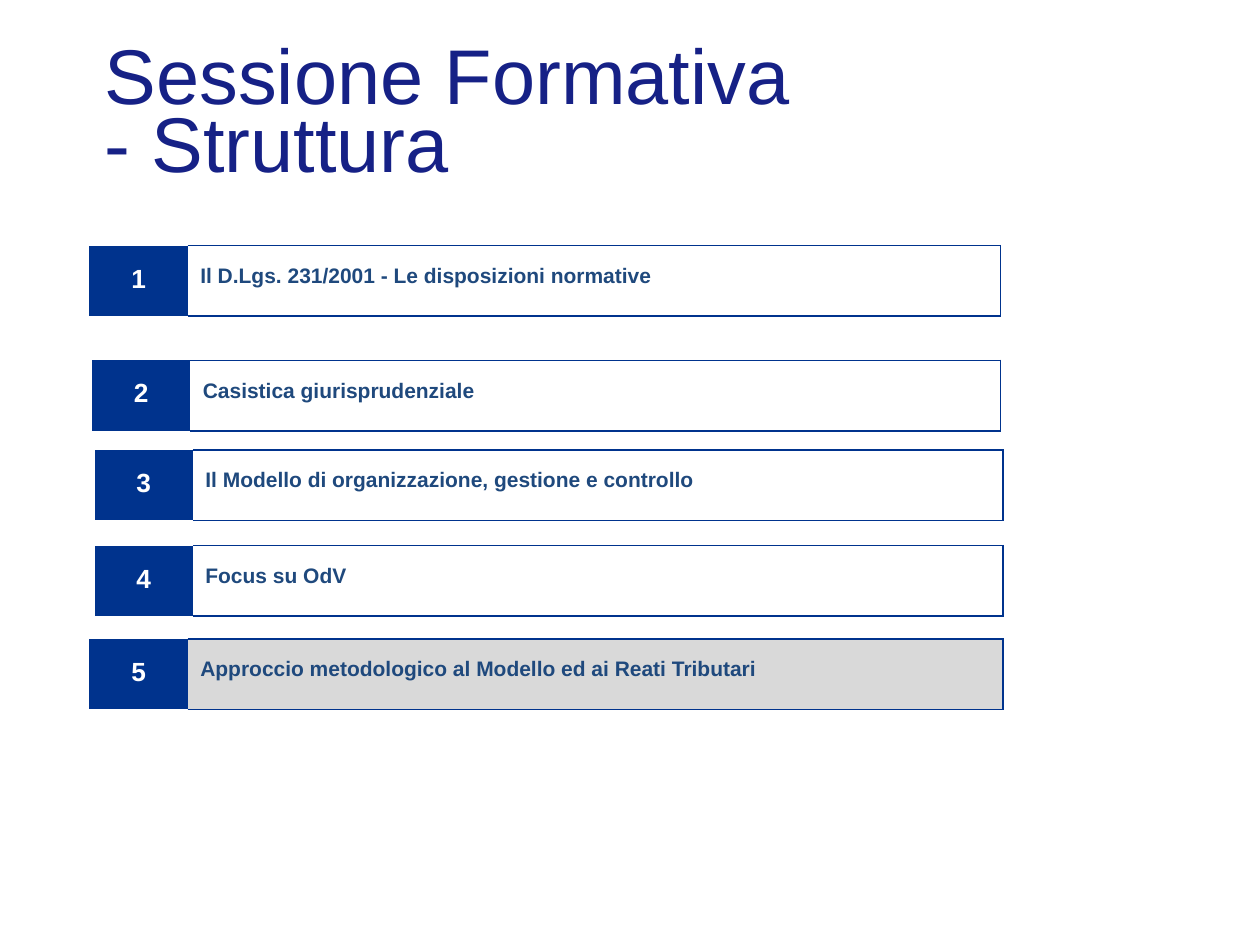
from dataclasses import dataclass

from lxml import etree
from pptx import Presentation
from pptx.dml.color import RGBColor
from pptx.enum import text
from pptx.oxml import ns
from pptx.util import Inches, Pt


@dataclass(frozen=True)
class Theme:
    font: str = "Arial"
    title: str = "162186"
    blue: str = "00338D"
    label: str = "1F497D"
    white: str = "FFFFFF"
    highlight: str = "D9D9D9"
    title_size: float = 44.3
    number_size: float = 15
    label_size: float = 12


@dataclass(frozen=True)
class Section:
    label: str
    left: float
    top: float
    label_width: float = 6.43
    fill: str | None = None


THEME = Theme()
NUMBER_WIDTH = 0.78
ROW_HEIGHT = 0.56
NO_STYLE_NO_GRID = "{2D5ABB26-0587-4C30-8999-92F81FD0307C}"

SECTIONS = [
    Section("Il D.Lgs. 231/2001 - Le disposizioni normative", 0.71, 1.95, 6.45),
    Section("Casistica giurisprudenziale", 0.73, 2.86),
    Section("Il Modello di organizzazione, gestione e controllo", 0.75, 3.57),
    Section("Focus su OdV", 0.75, 4.33),
    Section("Approccio metodologico al Modello ed ai Reati Tributari",
            0.71, 5.07, 6.47, THEME.highlight),
]


def style_font(p, size: float, color: str, bold: bool = False) -> None:
    p.font.name = THEME.font
    p.font.size = Pt(size)
    p.font.bold = bold
    p.font.color.rgb = RGBColor.from_string(color)


def fill_cell(cell, content: str, size: float, color: str,
              fill: str | None, indent: float = 0) -> None:
    cell.margin_left = Inches(indent)
    cell.margin_right = cell.margin_bottom = 0
    cell.margin_top = Inches(0.15)
    if fill:
        cell.fill.solid()
        cell.fill.fore_color.rgb = RGBColor.from_string(fill)
    else:
        cell.fill.background()
    p = cell.text_frame.paragraphs[0]
    p.text = content
    style_font(p, size, color, bold=True)


def add_borders(cell, sides: str) -> None:
    """Draw 1 pt borders; sides are given in schema order (L, R, T, B)."""
    props = cell._tc.get_or_add_tcPr()
    for i, side in enumerate(sides):
        ln = etree.Element(ns.qn(f"a:ln{side}"), w=str(Pt(1)))
        solid = etree.SubElement(ln, ns.qn("a:solidFill"))
        etree.SubElement(solid, ns.qn("a:srgbClr"), val=THEME.blue)
        props.insert(i, ln)


def add_title(slide, content: str) -> None:
    sp = slide.shapes.add_textbox(Inches(0.83), Inches(0.4), Inches(5.59), Inches(0.6))
    tf = sp.text_frame
    tf.word_wrap = True
    tf.vertical_anchor = text.MSO_ANCHOR.TOP
    tf.margin_left = tf.margin_top = tf.margin_right = tf.margin_bottom = 0
    p = tf.paragraphs[0]
    p.text = content
    p.line_spacing = 0.73
    style_font(p, THEME.title_size, THEME.title)


def add_section(slide, number: int, section: Section) -> None:
    table = slide.shapes.add_table(
        1, 2, Inches(section.left), Inches(section.top),
        Inches(NUMBER_WIDTH + section.label_width), Inches(ROW_HEIGHT)).table
    table.first_row = table.horz_banding = False
    table._tbl.tblPr.find(ns.qn("a:tableStyleId")).text = NO_STYLE_NO_GRID
    table.columns[0].width = Inches(NUMBER_WIDTH)
    table.columns[1].width = Inches(section.label_width)

    number_cell, label_cell = table.cell(0, 0), table.cell(0, 1)
    fill_cell(number_cell, str(number), THEME.number_size, THEME.white, THEME.blue)
    number_cell.text_frame.paragraphs[0].alignment = text.PP_ALIGN.CENTER
    fill_cell(label_cell, section.label, THEME.label_size, THEME.label,
              section.fill, indent=0.1)
    add_borders(label_cell, "RTB")


def main() -> None:
    prs = Presentation()
    prs.slide_width, prs.slide_height = Inches(10), Inches(7.5)
    slide = prs.slides.add_slide(prs.slide_layouts[6])
    add_title(slide, "Sessione Formativa - Struttura")
    for number, section in enumerate(SECTIONS, start=1):
        add_section(slide, number, section)
    prs.save("out.pptx")


if __name__ == "__main__":
    main()
